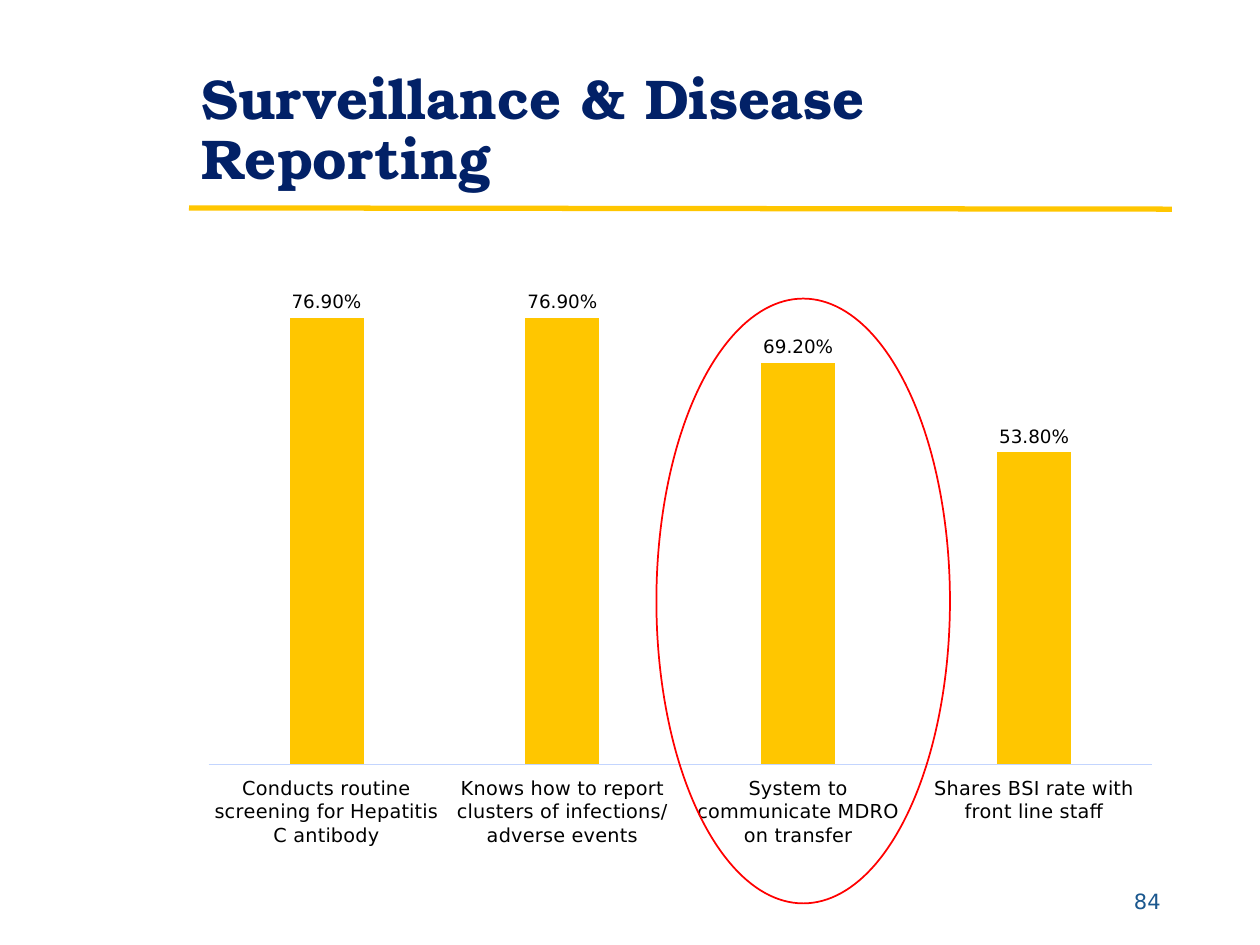
from dataclasses import dataclass

from lxml import etree
from pptx import Presentation
from pptx.chart.data import CategoryChartData
from pptx.dml.color import RGBColor as RGB
from pptx.enum.chart import XL_CHART_TYPE as CT, XL_LABEL_POSITION as LP
from pptx.enum.chart import XL_TICK_LABEL_POSITION as TLP, XL_TICK_MARK as TM
from pptx.enum.shapes import MSO_CONNECTOR as CONN, MSO_SHAPE as SHAPE
from pptx.enum.text import MSO_ANCHOR as ANC, PP_ALIGN as AL
from pptx.oxml import parse_xml
from pptx.oxml.ns import nsdecls, qn
from pptx.util import Inches, Pt


@dataclass(frozen=True)
class Theme:
    navy: str = "022167"
    gold: str = "FFC600"
    blue: str = "1A578E"
    pale: str = "C3D5FE"
    red: str = "FF0000"
    black: str = "000000"
    head_font: str = "TeX Gyre Bonum"
    body_font: str = "DejaVu Sans"
    title: float = 32
    number: float = 12
    axis: float = 11
    label: float = 10.5
    chart: float = 10


T = Theme()
W, H = 10, 7.5
LEFT, WIDTH = 1.5, 7.8  # content column

RATES = {
    "Conducts routine screening for Hepatitis C antibody": 0.769,
    "Knows how to report clusters of infections/ adverse events": 0.769,
    "System to communicate MDRO on transfer": 0.692,
    "Shares BSI rate with front line staff": 0.538,
}


def inches(*lengths):
    return [Inches(v) for v in lengths]


def style_font(font, size, color, name=T.body_font, bold=False):
    font.size, font.name, font.bold = Pt(size), name, bold
    font.color.rgb = RGB.from_string(color)


def add_text(s, box, text, *, anchor=ANC.MIDDLE, align=AL.LEFT, spacing=1.0, **font):
    tf = s.shapes.add_textbox(*inches(*box)).text_frame
    tf.word_wrap, tf.vertical_anchor = True, anchor
    p = tf.paragraphs[0]
    p.alignment, p.line_spacing = align, spacing
    r = p.add_run()
    r.text = text
    style_font(r.font, **font)


def add_header(s, box):
    x, y, w, h = box
    add_text(s, (x, y, w, h - 0.08), "Surveillance & Disease Reporting",
             anchor=ANC.BOTTOM, spacing=0.9, size=T.title, color=T.navy,
             name=T.head_font, bold=True)
    # Rule under the title
    rule = s.shapes.add_connector(CONN.STRAIGHT, *inches(x, y + h, x + w, y + h + 0.01))
    rule.line.color.rgb, rule.line.width = RGB.from_string(T.gold), Pt(3)
    etree.SubElement(rule._element.spPr, qn("a:effectLst"))


def set_plot_box(chart, **shares):
    """Fix the inner plot area as shares of the chart's size."""
    parts = "".join(f'<c:{k} val="{v}"/>' for k, v in shares.items())
    area = chart._chartSpace.chart.plotArea
    for old in area.findall(qn("c:layout")):
        area.remove(old)
    area.insert(0, parse_xml(
        f'<c:layout {nsdecls("c")}><c:manualLayout><c:layoutTarget val="inner"/>'
        f'<c:xMode val="edge"/><c:yMode val="edge"/>{parts}</c:manualLayout></c:layout>'))


def add_rates_chart(s, box):
    data = CategoryChartData(number_format="0.00%")
    data.categories = list(RATES)
    data.add_series("Series 1", list(RATES.values()))
    chart = s.shapes.add_chart(CT.COLUMN_CLUSTERED, *inches(*box), data).chart
    chart.has_legend = chart.has_title = False
    style_font(chart.font, T.chart, T.navy)
    set_plot_box(chart, x=0.02, y=0.02, w=0.96, h=0.84)

    # Axes
    cat, val = chart.category_axis, chart.value_axis
    cat.major_tick_mark = cat.minor_tick_mark = TM.NONE
    cat.tick_label_position = TLP.LOW
    style_font(cat.tick_labels.font, T.axis, T.black)
    cat.format.line.color.rgb = RGB.from_string(T.pale)
    cat.format.line.width = Pt(0.75)
    val.minimum_scale, val.maximum_scale = 0, 0.9
    val.has_major_gridlines = val.visible = False

    # Bars and their values
    plot = chart.plots[0]
    plot.gap_width, plot.overlap, plot.vary_by_categories = 219, -27, False
    fill = plot.series[0].format.fill
    fill.solid()
    fill.fore_color.rgb = RGB.from_string(T.gold)
    labels = plot.series[0].data_labels
    labels.show_value, labels.position = True, LP.OUTSIDE_END
    labels.number_format, labels.number_format_is_linked = "0.00%", False
    style_font(labels.font, T.label, T.black)


def add_highlight(s, box):
    sp = s.shapes.add_shape(SHAPE.OVAL, *inches(*box))
    sp.shadow.inherit = False
    sp.fill.background()
    sp.line.color.rgb, sp.line.width = RGB.from_string(T.red), Pt(1)


def add_page_number(s, box):
    add_text(s, box, "84", align=AL.RIGHT, size=T.number, color=T.blue)


def main():
    prs = Presentation()
    prs.slide_width, prs.slide_height = inches(W, H)
    s = prs.slides.add_slide(prs.slide_layouts[6])
    add_header(s, (LEFT, 0.12, WIDTH, 1.53))
    add_page_number(s, (8, 6.95, 1.31, 0.4))
    add_rates_chart(s, (LEFT, 1.82, WIDTH, 4.94))
    # Ring around the third column
    add_highlight(s, (5.21, 2.37, 2.33, 4.8))
    prs.save("out.pptx")


if __name__ == "__main__":
    main()
